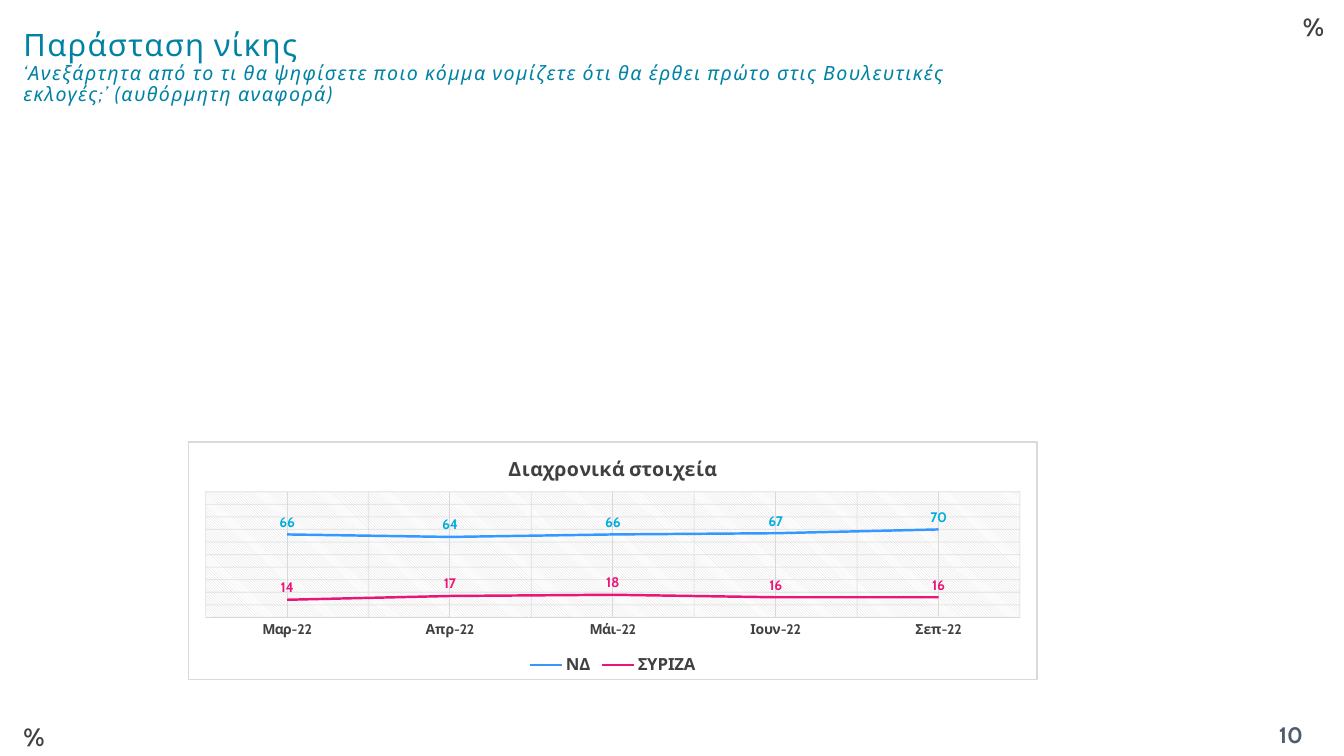
from dataclasses import dataclass

from lxml import etree
from pptx import Presentation
from pptx import util as u
from pptx.chart.data import CategoryChartData
from pptx.dml.color import RGBColor
from pptx.enum import chart as charts
from pptx.enum import text
from pptx.oxml import parse_xml
from pptx.oxml.ns import nsdecls, qn


@dataclass(frozen=True)
class Theme:
    font: str = "Cabin"
    white: str = "FFFFFF"
    heading: str = "0082A5"
    ink: str = "404040"
    page: str = "4E5B6F"
    rule: str = "D9D9D9"
    first_line: str = "3399FF"
    first_label: str = "00ADDC"
    second: str = "EA157A"
    title_size: int = 22
    question_size: int = 14
    unit_size: int = 18
    page_size: int = 16
    chart_title_size: int = 14
    legend_size: int = 12
    label_size: int = 10


THEME = Theme()
WIDTH, HEIGHT = u.Inches(13.33), u.Inches(7.5)
MARGIN = 0.01
FOOTER_TOP, FOOTER_HEIGHT = 0.947, 0.053
MONTHS = ["Μαρ-22", "Απρ-22", "Μάι-22", "Ιουν-22", "Σεπ-22"]
PARTIES = [
    ("ΝΔ", [66, 64, 66, 67, 70], THEME.first_line, THEME.first_label),
    ("ΣΥΡΙΖΑ", [14, 17, 18, 16, 16], THEME.second, THEME.second),
]
PLOT_LAYOUT = {"x": 0.02, "y": 0.21, "w": 0.96, "h": 0.53}


def place(left, top, width, height):
    return [u.Emu(round(share * side)) for share, side in
            zip((left, top, width, height), (WIDTH, HEIGHT) * 2)]


def style_font(font, size, color, bold=False, italic=False):
    font.name = THEME.font
    font.size = u.Pt(size)
    font.bold = bold
    font.italic = italic
    font.color.rgb = RGBColor.from_string(color)


def add_box(slide, area):
    text_frame = slide.shapes.add_textbox(*place(*area)).text_frame
    text_frame.word_wrap = True
    return text_frame


def add_heading(slide, title, question):
    text_frame = add_box(slide, (MARGIN, 0.064, 0.725, 0.052))
    text_frame.vertical_anchor = text.MSO_ANCHOR.MIDDLE
    paragraph = text_frame.paragraphs[0]
    paragraph.line_spacing = 0.9
    paragraph.text = f"{title}\v{question}"
    title_run, question_run = paragraph.runs
    style_font(title_run.font, THEME.title_size, THEME.heading)
    style_font(question_run.font, THEME.question_size, THEME.heading, italic=True)
    for run in paragraph.runs:
        run.font._element.set("spc", "100")


def add_mark(slide, words, area, size, color, alignment=text.PP_ALIGN.LEFT):
    text_frame = add_box(slide, area)
    text_frame.text = words
    paragraph = text_frame.paragraphs[0]
    paragraph.alignment = alignment
    style_font(paragraph.runs[0].font, size, color, bold=True)


def style_line(line, color, width, opacity=None):
    line.color.rgb = RGBColor.from_string(color)
    line.width = u.Pt(width)
    if opacity:
        color_element = next(line._ln.iter(qn("a:srgbClr")))
        etree.SubElement(color_element, qn("a:alpha")).set("val", str(opacity * 1000))


def solid(color):
    return f'<a:solidFill><a:srgbClr val="{color}"/></a:solidFill>'


def area_format(fill, line):
    return parse_xml(f'<c:spPr {nsdecls("c", "a")}>{fill}{line}</c:spPr>')


def style_areas(chart):
    space = chart._chartSpace
    plot_area = space.chart.plotArea
    for old in plot_area.findall(qn("c:layout")):
        plot_area.remove(old)
    sizes = "".join(f'<c:{key} val="{share}"/>' for key, share in PLOT_LAYOUT.items())
    plot_area.insert(0, parse_xml(
        f'<c:layout {nsdecls("c")}><c:manualLayout><c:layoutTarget val="inner"/>'
        f'<c:xMode val="edge"/><c:yMode val="edge"/>{sizes}</c:manualLayout></c:layout>'))
    hatch = (f'<a:pattFill prst="ltDnDiag"><a:fgClr><a:srgbClr val="{THEME.rule}"/></a:fgClr>'
             f'<a:bgClr><a:srgbClr val="{THEME.white}"/></a:bgClr></a:pattFill>')
    plot_area.append(area_format(hatch, "<a:ln><a:noFill/></a:ln>"))
    border = f'<a:ln w="{u.Pt(0.75)}">{solid(THEME.rule)}</a:ln>'
    space.chart.addnext(area_format(solid(THEME.white), border))


def style_axes(chart):
    months, values = chart.category_axis, chart.value_axis
    months.has_major_gridlines = months.has_minor_gridlines = True
    months.major_tick_mark = charts.XL_TICK_MARK.NONE
    style_font(months.tick_labels.font, THEME.label_size, THEME.ink, bold=True)
    style_line(months.format.line, THEME.rule, 0.75)
    values.visible = False
    values.minimum_scale, values.maximum_scale, values.major_unit = 0, 100, 10
    values.has_major_gridlines = True
    months_minor = months._element.find(qn("c:minorGridlines"))
    months_minor.append(area_format("", f'<a:ln w="{u.Pt(0.75)}">{solid(THEME.rule)}</a:ln>'))
    for axis in (months, values):
        style_line(axis.major_gridlines.format.line, THEME.rule, 0.75, opacity=54)


def style_series(series, line_color, label_color):
    series.smooth = False
    series.marker.style = charts.XL_MARKER_STYLE.NONE
    style_line(series.format.line, line_color, 1.75)
    labels = series.data_labels
    labels.show_value = True
    labels.position = charts.XL_LABEL_POSITION.ABOVE
    style_font(labels.font, THEME.label_size, label_color, bold=True)


def add_trend_chart(slide, title, area):
    data = CategoryChartData()
    data.categories = MONTHS
    for name, values, *_ in PARTIES:
        data.add_series(name, values)
    chart = slide.shapes.add_chart(charts.XL_CHART_TYPE.LINE, *place(*area), data).chart
    style_font(chart.font, THEME.label_size, THEME.ink)
    chart.has_title = True
    chart.chart_title.include_in_layout = False
    chart.chart_title.text_frame.text = title
    title_run = chart.chart_title.text_frame.paragraphs[0].runs[0]
    style_font(title_run.font, THEME.chart_title_size, THEME.ink, bold=True)
    chart.has_legend = True
    chart.legend.position = charts.XL_LEGEND_POSITION.BOTTOM
    chart.legend.include_in_layout = False
    style_font(chart.legend.font, THEME.legend_size, THEME.ink, bold=True)
    plot = chart.plots[0]
    plot.vary_by_categories = False
    for series, (_, _, line_color, label_color) in zip(plot.series, PARTIES):
        style_series(series, line_color, label_color)
    style_axes(chart)
    style_areas(chart)


def main():
    presentation = Presentation()
    presentation.slide_width, presentation.slide_height = WIDTH, HEIGHT
    slide = presentation.slides.add_slide(presentation.slide_layouts[6])
    add_heading(
        slide, "Παράσταση νίκης",
        "‘Ανεξάρτητα από το τι θα ψηφίσετε ποιο κόμμα νομίζετε ότι θα έρθει πρώτο "
        "στις Βουλευτικές εκλογές;’ (αυθόρμητη αναφορά)")
    for left, top in ((0.962, 0.009), (MARGIN, FOOTER_TOP)):
        add_mark(slide, "%", (left, top, 0.038, FOOTER_HEIGHT), THEME.unit_size, THEME.ink)
    add_mark(slide, "10", (0.921, FOOTER_TOP, 0.079, FOOTER_HEIGHT),
             THEME.page_size, THEME.page, text.PP_ALIGN.CENTER)
    add_trend_chart(slide, "Διαχρονικά στοιχεία", (0.14, 0.584, 0.632, 0.315))
    presentation.save("out.pptx")


if __name__ == "__main__":
    main()
